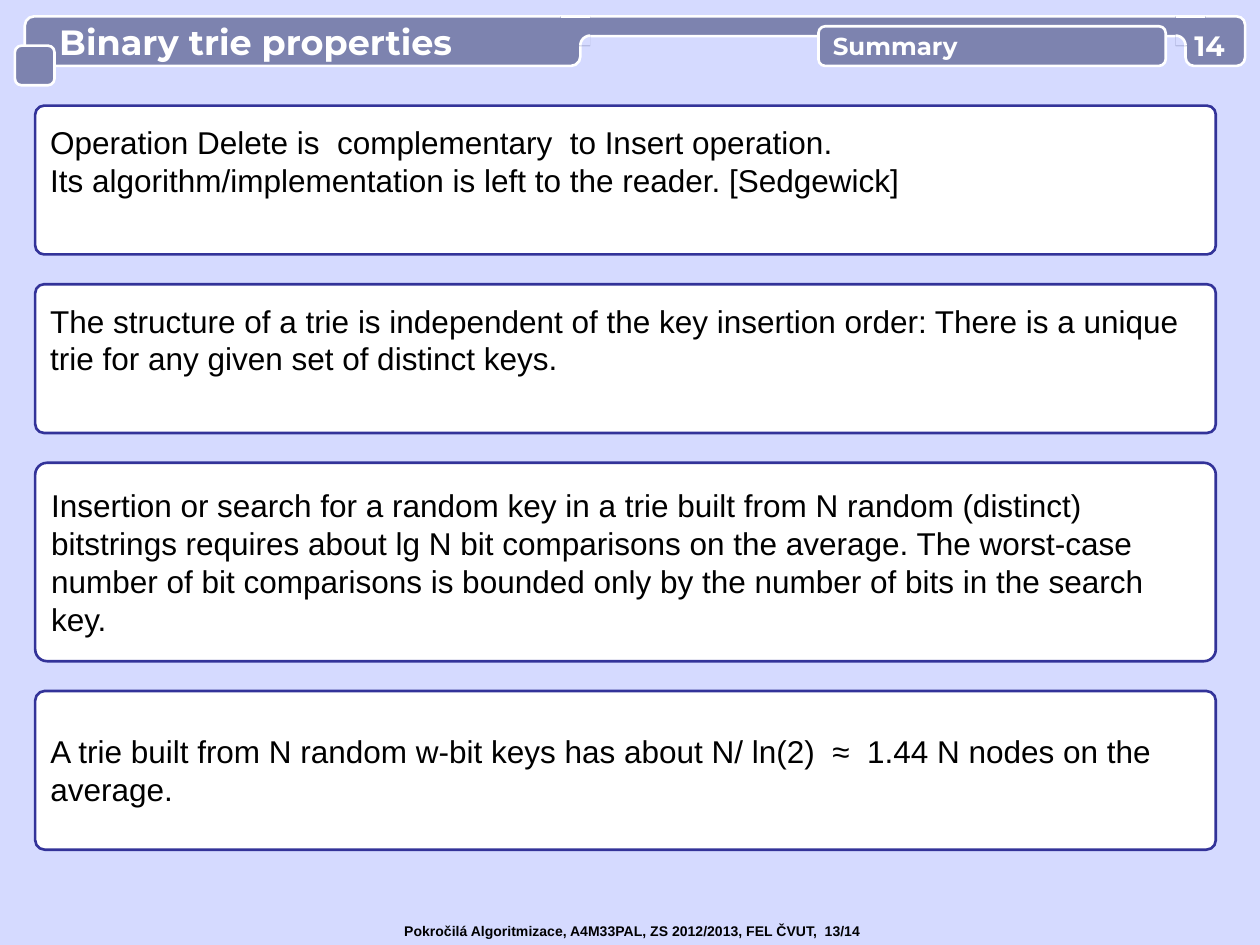
"""Build the summary slide on binary trie properties."""
from dataclasses import dataclass
from math import cos, pi, sin

from lxml import etree
from pptx import Presentation
from pptx import util as u
from pptx.dml import color
from pptx.enum import shapes, text
from pptx.oxml import ns


@dataclass(frozen=True)
class Theme:
    back: str = "D5DAFF"
    bar: str = "7D83AF"
    card: str = "FFFFFF"
    edge: str = "333399"
    light: str = "FFFFFF"
    dark: str = "000000"
    head: str = "Montserrat"
    body: str = "Arial"
    title: int = 20
    label: int = 14
    page: int = 16
    main: int = 18
    foot: int = 8
    stroke: float = 1.5


class Deck:
    def __init__(self, theme):
        self.theme = theme
        self.show = Presentation()
        self.show.slide_width, self.show.slide_height = u.Cm(25.4), u.Cm(19.05)
        self.slide = self.show.slides.add_slide(self.show.slide_layouts[6])
        self.fill(self.slide.background, theme.back)

    def fill(self, item, tint):
        item.fill.solid()
        item.fill.fore_color.rgb = color.RGBColor.from_string(tint)

    def paint(self, shape, tint, edge):
        shape.shadow.inherit = False
        if tint:
            self.fill(shape, tint)
        else:
            shape.fill.background()
        if edge:
            self.trace(shape, edge)
        else:
            shape.line.fill.background()

    def trace(self, shape, edge):
        shape.line.color.rgb = color.RGBColor.from_string(edge)
        shape.line.width = u.Pt(self.theme.stroke)

    def block(self, area, tint, edge=None, round=None):
        kind = shapes.MSO_SHAPE.RECTANGLE
        if round is not None:
            kind = shapes.MSO_SHAPE.ROUNDED_RECTANGLE
        shape = self.slide.shapes.add_shape(kind, *map(u.Cm, area))
        if round is not None:
            shape.adjustments[0] = round
        self.paint(shape, tint, edge)
        return shape

    def letter(self, shape, lines, size, face, tint, bold=True, **frame):
        style = {"size": u.Pt(size), "name": face, "bold": bold}
        setup = {"word_wrap": True, "vertical_anchor": text.MSO_ANCHOR.MIDDLE}
        for key, value in (setup | frame).items():
            setattr(shape.text_frame, key, value)
        shape.text_frame.text = "\n".join(lines)
        for para in shape.text_frame.paragraphs:
            para.alignment = text.PP_ALIGN.LEFT
            for run in para.runs:
                run.font.color.rgb = color.RGBColor.from_string(tint)
                for key, value in style.items():
                    setattr(run.font, key, value)

    def label(self, area, *words, **frame):
        box = self.slide.shapes.add_textbox(*map(u.Cm, area))
        self.letter(box, *words, **frame)

    def rule(self, left, right, top):
        line = self.slide.shapes.add_connector(
            shapes.MSO_CONNECTOR.STRAIGHT, *map(u.Cm, (left, top, right, top)))
        self.trace(line, self.theme.light)
        etree.SubElement(line._element.spPr, ns.qn("a:effectLst"))

    def trail(self, points, tint, edge, close):
        spots = [(u.Cm(x), u.Cm(y)) for x, y in points]
        form = self.slide.shapes.build_freeform(*spots[0])
        form.add_line_segments(spots[1:], close=close)
        self.paint(form.convert_to_shape(), tint, edge)

    def joint(self, left, hub, side, low=0.92, size=0.2, steps=12):
        self.block((left, 0.33, 0.6, 0.6), self.theme.bar)
        self.rule(left, left + 0.6, 0.33)
        turns = [pi / 2 * i / steps for i in range(steps + 1)]
        arc = [(hub + side * size * sin(t), low - size * cos(t)) for t in turns]
        self.trail(arc + [(hub, low)], self.theme.back, None, True)
        self.trail(arc, None, self.theme.light, False)


def main():
    look = Theme()
    deck = Deck(look)
    cards = [
        (3, 0.9, ["Operation Delete is  complementary  to Insert operation.",
                  "Its algorithm/implementation is left to the reader. [Sedgewick]"]),
        (3, 0.9, ["The structure of a trie is independent of the key insertion order: "
                  "There is a unique trie for any given set of distinct keys."]),
        (4, 0.13, ["Insertion or search for a random key in a trie built from N random "
                   "(distinct) bitstrings requires about lg N bit comparisons on the "
                   "average. The worst-case number of bit comparisons is bounded only "
                   "by the number of bits in the search key."]),
        (3.2, 0.13, ["A trie built from N random w-bit keys has about "
                     "N/ ln(2)  ≈  1.44 N nodes on the average."]),
    ]
    top, gap = 2.13, 0.6
    for tall, base, lines in cards:
        card = deck.block((0.71, top, 23.8, tall), look.card, look.edge, 0.06)
        deck.letter(card, lines, look.main, look.body, look.dark, False,
                    margin_bottom=u.Cm(base))
        top += tall + gap

    title = deck.block((0.5, 0.33, 11.2, 1), look.bar, look.light, 0.19)
    deck.letter(title, ["Binary trie properties"], look.title, look.head, look.light,
                margin_left=u.Cm(0.64))
    deck.block((11.7, 0.33, 12.4, 0.4), look.bar, look.light, 0.5)
    deck.joint(11.3, 11.9, -1)
    deck.block((0.3, 0.92, 0.8, 0.8), look.bar, look.light, 0.17)
    deck.block((23.9, 0.33, 1.2, 1), look.bar, look.light, 0.17)
    deck.joint(23.7, 23.7, 1)
    topic = deck.block((16.5, 0.53, 7, 0.8), look.bar, look.light, 0.17)
    deck.letter(topic, ["Summary"], look.label, look.head, look.light)

    flush = {f"margin_{side}": 0 for side in ("left", "top", "right", "bottom")}
    deck.label((23.9, 0.57, 1.02, 0.68), ["14"], look.page, look.head, look.light,
               **flush | {"margin_left": u.Cm(0.18)})
    deck.label((7.9, 18.46, 9.9, 0.6),
               ["Pokročilá Algoritmizace, A4M33PAL, ZS 2012/2013, FEL ČVUT,  13/14"],
               look.foot, look.body, look.dark)
    deck.show.save("out.pptx")


if __name__ == "__main__":
    main()
